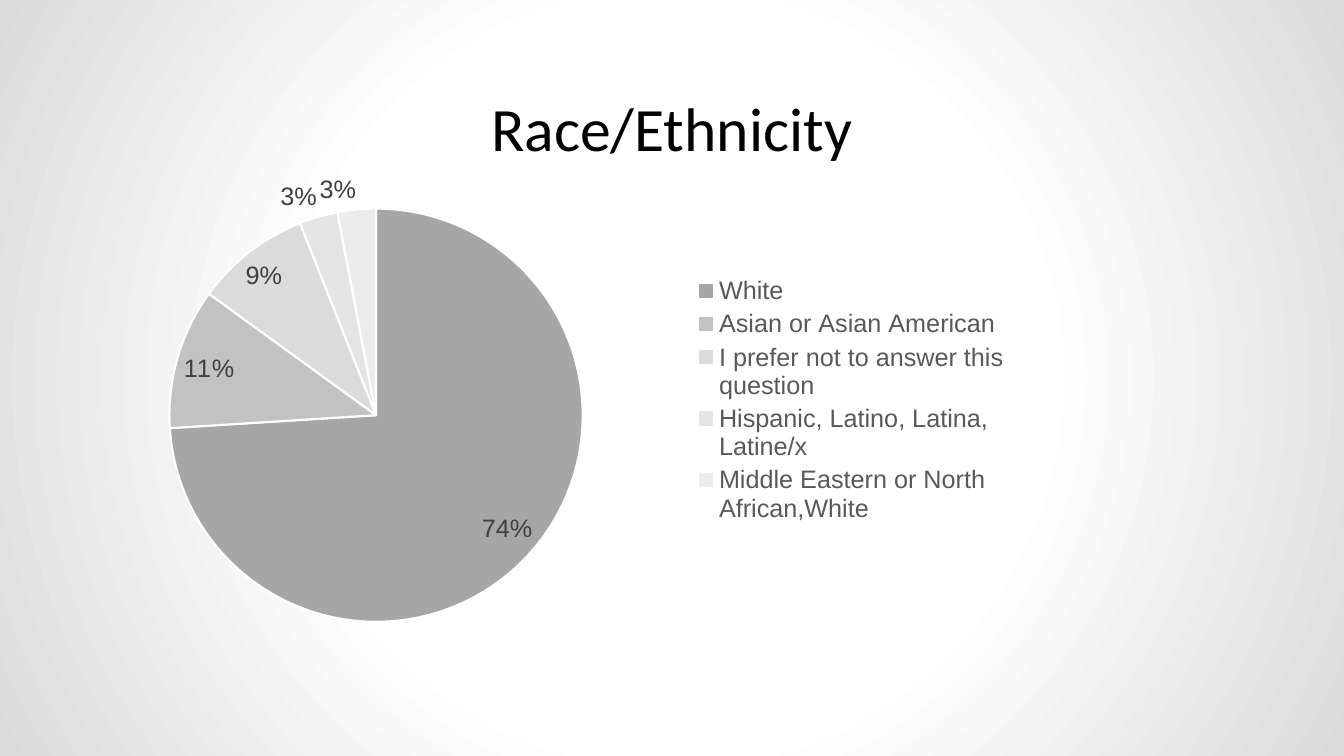
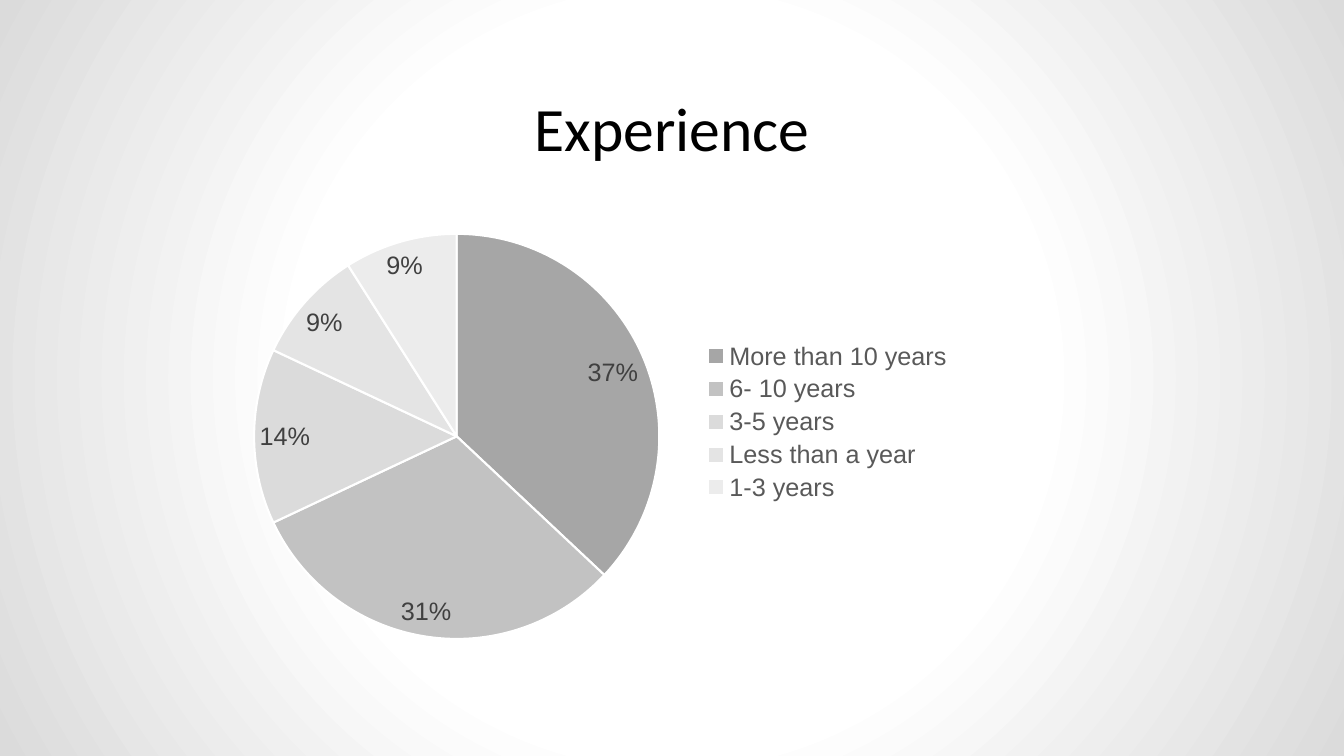
from lxml.etree import SubElement
from pptx import Presentation
from pptx.chart.data import CategoryChartData
from pptx.dml.color import RGBColor
from pptx.enum.chart import XL_CHART_TYPE, XL_LABEL_POSITION, XL_LEGEND_POSITION
from pptx.enum.text import MSO_ANCHOR, PP_ALIGN
from pptx.oxml import parse_xml
from pptx.oxml.ns import nsdecls, qn
from pptx.util import Inches, Pt

BLACK, WHITE = "000000", "FFFFFF"
LEGEND_GREY, LABEL_GREY = "595959", "404040"
SLICE_COLOURS = ["A6A6A6", "C2C2C2", "DBDBDB", "E4E4E4", "ECECEC"]
BACKGROUND_STOPS = [(0, WHITE), (48, WHITE), (100, "DBDBDB")]
TITLE_BOX = (1.05, 0.79, 11.23, 0.84)

RACE = {
    "title": "Race/Ethnicity",
    "shares": {
        "White": 0.74,
        "Asian or Asian American": 0.11,
        "I prefer not to answer this question": 0.09,
        "Hispanic, Latino, Latina, Latine/x": 0.03,
        "Middle Eastern or North African,White": 0.03,
    },
    "chart_box": (0.64, 1.6, 9.44, 4.72),
    "pie_box": (1.68, 2.07, 4.1, 4.1),
    "legend_box": (6.84, 2.7, 3.2, 2.53),
    "label_content": {"show_value": True, "show_percentage": False},
}
EXPERIENCE = {
    "title": "Experience",
    "shares": {
        "More than 10 years": 37,
        "6- 10 years": 31,
        "3-5 years": 14,
        "Less than a year": 9,
        "1-3 years": 9,
    },
    "chart_box": (2, 1.87, 7.53, 4.61),
    "pie_box": (2.52, 2.32, 4.02, 4.02),
    "legend_box": (6.96, 3.35, 2.5, 1.67),
    "label_content": {"show_value": False, "show_percentage": True},
}


def colour(value):
    return RGBColor.from_string(value)


def set_values(target, values):
    for name, value in values.items():
        setattr(target, name, value)


def set_font(font, size, family, hue):
    set_values(font, {"size": Pt(size), "name": family, "bold": False})
    font.color.rgb = colour(hue)


def set_background(master):
    stops = "".join(
        f'<a:gs pos="{position * 1000}"><a:srgbClr val="{hue}"/></a:gs>'
        for position, hue in BACKGROUND_STOPS
    )
    common = master.element.find(qn("p:cSld"))
    for old in common.findall(qn("p:bg")):
        common.remove(old)
    common.insert(0, parse_xml(
        f'<p:bg {nsdecls("p", "a")}><p:bgPr><a:gradFill rotWithShape="1">'
        f'<a:gsLst>{stops}</a:gsLst><a:path path="circle">'
        '<a:fillToRect l="50000" t="50000" r="50000" b="50000"/></a:path>'
        '</a:gradFill><a:effectLst/></p:bgPr></p:bg>'
    ))


def add_title(page, text):
    box = page.shapes.title
    set_values(box, dict(zip(("left", "top", "width", "height"), map(Inches, TITLE_BOX))))
    frame = box.text_frame
    margins = ("margin_left", "margin_top", "margin_right", "margin_bottom")
    set_values(frame, dict.fromkeys(margins, Inches(0.1)))
    set_values(frame, {"text": text, "word_wrap": True, "vertical_anchor": MSO_ANCHOR.TOP})
    para = frame.paragraphs[0]
    para.alignment = PP_ALIGN.CENTER
    set_font(para.runs[0].font, 44, "Calibri", BLACK)


def place_part(part, index, box, chart_box, inner=False):
    for old in part.findall(qn("c:layout")):
        part.remove(old)
    layout = parse_xml(f'<c:layout {nsdecls("c")}><c:manualLayout/></c:layout>')
    left, top, width, height = chart_box
    settings = {
        "xMode": "edge",
        "yMode": "edge",
        "x": (box[0] - left) / width,
        "y": (box[1] - top) / height,
        "w": box[2] / width,
        "h": box[3] / height,
    }
    if inner:
        settings = {"layoutTarget": "inner", **settings}
    for name, value in settings.items():
        SubElement(layout[0], qn(f"c:{name}")).set("val", str(value))
    part.insert(index, layout)


def add_pie(page, shares, chart_box, pie_box, legend_box, label_content):
    data = CategoryChartData()
    data.categories = list(shares)
    data.add_series("Series 1", list(shares.values()))
    chart = page.shapes.add_chart(
        XL_CHART_TYPE.PIE, *map(Inches, chart_box), data
    ).chart
    set_values(chart, {"has_title": False, "has_legend": True})
    set_font(chart.font, 18, "Arial", BLACK)

    legend = chart.legend
    set_values(legend, {"position": XL_LEGEND_POSITION.RIGHT, "include_in_layout": False})
    set_font(legend.font, 18, "Arial", LEGEND_GREY)

    plot = chart.plots[0]
    plot.vary_by_categories = True
    series = plot.series[0]
    for index, hue in enumerate(SLICE_COLOURS):
        style = series.points[index].format
        style.fill.solid()
        style.fill.fore_color.rgb = colour(hue)
        style.line.color.rgb = colour(WHITE)
        style.line.width = Pt(1.5)

    labels = series.data_labels
    set_values(labels, {
        **label_content,
        "number_format": "0%",
        "number_format_is_linked": False,
        "position": XL_LABEL_POSITION.BEST_FIT,
    })
    set_font(labels.font, 18, "Arial", LABEL_GREY)

    plot_area = chart.element.find(f".//{qn('c:plotArea')}")
    place_part(plot_area, 0, pie_box, chart_box, inner=True)
    place_part(chart.element.find(f".//{qn('c:legend')}"), 1, legend_box, chart_box)


def add_page(deck, title, **pie):
    page = deck.slides.add_slide(deck.slide_layouts.get_by_name("Title Only"))
    add_title(page, title)
    add_pie(page, **pie)


def main():
    deck = Presentation()
    set_values(deck, {"slide_width": Inches(13.33), "slide_height": Inches(7.5)})
    set_background(deck.slide_master)
    for content in (RACE, EXPERIENCE):
        add_page(deck, **content)
    deck.save("out.pptx")


if __name__ == "__main__":
    main()
